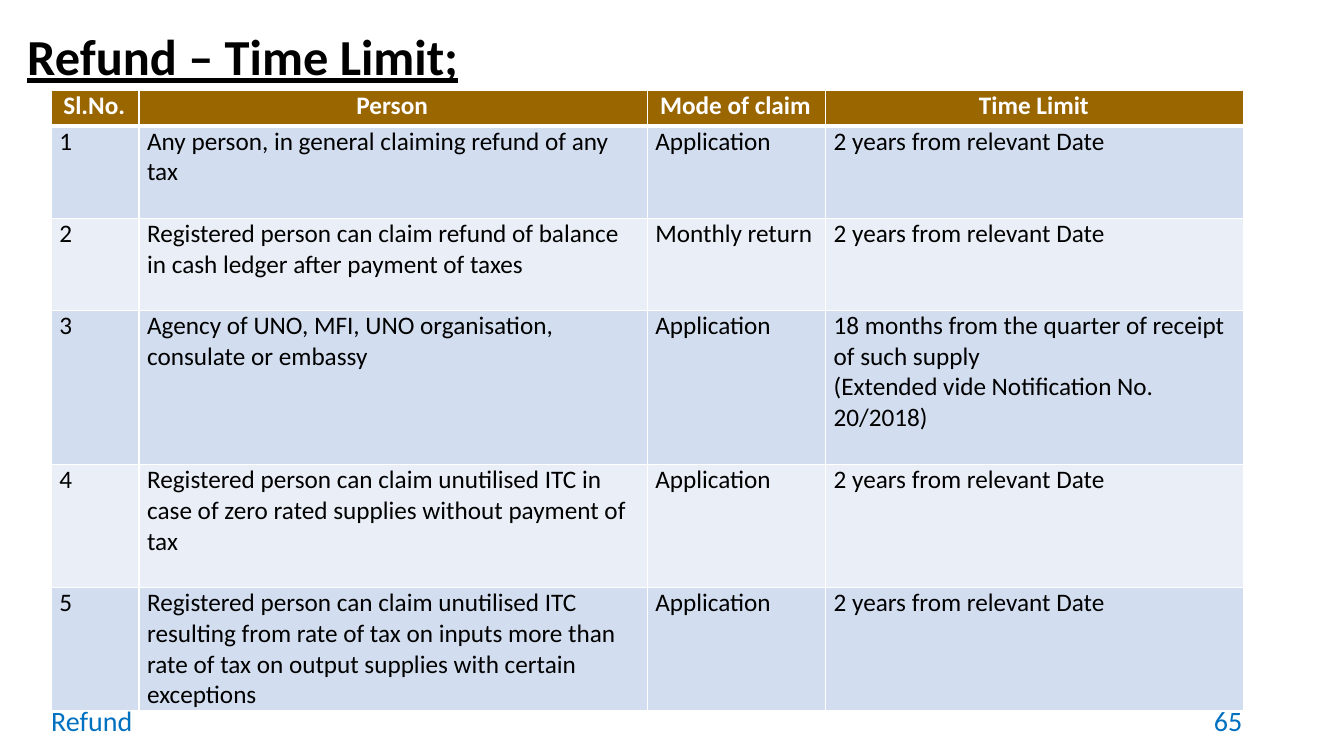
from lxml.etree import SubElement
from pptx import Presentation
from pptx.dml.color import RGBColor
from pptx.enum.text import MSO_ANCHOR, MSO_AUTO_SIZE, PP_ALIGN
from pptx.oxml.ns import qn
from pptx.util import Inches, Pt

FONT = "Calibri"
BLACK = RGBColor(0x00, 0x00, 0x00)
WHITE = RGBColor(0xFF, 0xFF, 0xFF)
BLUE = RGBColor(0x00, 0x70, 0xC0)
BROWN = RGBColor(0x99, 0x66, 0x00)
BANDS = (RGBColor(0xD2, 0xDE, 0xEF), RGBColor(0xEA, 0xEF, 0xF7))

TWO_YEARS = "2 years from relevant Date"
COL_WIDTHS = (0.87, 5.04, 1.77, 4.15)
ROW_HEIGHTS = (0.35, 0.92, 0.91, 1.53, 1.22, 1.22)
HEADER = ("Sl.No.", "Person", "Mode of claim", "Time Limit")
CLAIMS = (
    ("Any person, in general claiming refund of any tax", "Application", TWO_YEARS),
    ("Registered person can claim refund of balance in cash ledger after payment of taxes",
     "Monthly return", TWO_YEARS),
    ("Agency of UNO, MFI, UNO organisation, consulate or embassy", "Application",
     "18 months from the quarter of receipt of such supply\n"
     "(Extended vide Notification No. 20/2018)"),
    ("Registered person can claim unutilised ITC in case of zero rated supplies "
     "without payment of tax", "Application", TWO_YEARS),
    ("Registered person can claim unutilised ITC resulting from rate of tax on inputs "
     "more than rate of tax on output supplies with certain exceptions",
     "Application", TWO_YEARS),
)


def add_run(p, text, size, color, bold=False):
    r = p.add_run()
    r.text = text
    r.font.name = FONT
    r.font.size = Pt(size)
    r.font.color.rgb = color
    r.font.bold = bold
    return r


def set_title(s, text):
    title = s.shapes.title
    title.left, title.top = Inches(0.17), Inches(0.27)
    title.width, title.height = Inches(12.7), Inches(0.65)
    tf = title.text_frame
    tf.auto_size = MSO_AUTO_SIZE.NONE
    tf.vertical_anchor = MSO_ANCHOR.TOP
    p = tf.paragraphs[0]
    p.alignment = PP_ALIGN.JUSTIFY
    p.line_spacing = 0.9
    p.space_before = p.space_after = Pt(6)
    add_run(p, text, 36, BLACK, bold=True).font.underline = True


def add_footer(s, text, left, width, align):
    sp = s.shapes.add_textbox(Inches(left), Inches(6.95), Inches(width), Inches(0.4))
    tf = sp.text_frame
    tf.word_wrap = True
    tf.vertical_anchor = MSO_ANCHOR.MIDDLE
    p = tf.paragraphs[0]
    p.alignment = align
    add_run(p, text, 20, BLUE)


def set_borders(cell, bottom):
    """Draw white cell borders, 1 pt except for the bottom one."""
    tc_pr = cell._tc.get_or_add_tcPr()
    sides = (("a:lnL", 1), ("a:lnR", 1), ("a:lnT", 1), ("a:lnB", bottom))
    for i, (tag, width) in enumerate(sides):
        ln = SubElement(tc_pr, qn(tag), w=str(Pt(width)))
        fill = SubElement(ln, qn("a:solidFill"))
        SubElement(fill, qn("a:srgbClr"), val=str(WHITE))
        tc_pr.insert(i, ln)


def fill_cell(cell, text, fill, color, align, bold, bottom):
    cell.margin_left, cell.margin_right = Inches(0.08), Inches(0.1)
    cell.margin_top = cell.margin_bottom = 0
    cell.fill.solid()
    cell.fill.fore_color.rgb = fill
    set_borders(cell, bottom)
    tf = cell.text_frame
    for i, line in enumerate(text.split("\n")):
        p = tf.add_paragraph() if i else tf.paragraphs[0]
        p.alignment = align
        add_run(p, line, 18, color, bold)


def add_claims_table(s):
    frame = s.shapes.add_table(len(ROW_HEIGHTS), len(COL_WIDTHS), Inches(0.51), Inches(0.9),
                               Inches(sum(COL_WIDTHS)), Inches(sum(ROW_HEIGHTS)))
    table = frame.table
    for col, width in zip(table.columns, COL_WIDTHS):
        col.width = Inches(width)
    for row, height in zip(table.rows, ROW_HEIGHTS):
        row.height = Inches(height)
    for c, text in enumerate(HEADER):
        fill_cell(table.cell(0, c), text, BROWN, WHITE, PP_ALIGN.CENTER, True, 3)
    for n, claim in enumerate(CLAIMS, start=1):
        for c, text in enumerate((str(n), *claim)):
            fill_cell(table.cell(n, c), text, BANDS[(n - 1) % 2], BLACK,
                      PP_ALIGN.LEFT, False, 1)


def main():
    prs = Presentation()
    prs.slide_width, prs.slide_height = Inches(13.33), Inches(7.5)
    s = prs.slides.add_slide(prs.slide_layouts[5])
    set_title(s, "Refund – Time Limit;")
    add_footer(s, "65", 9.42, 3, PP_ALIGN.RIGHT)
    add_footer(s, "Refund", 0.41, 1.18, PP_ALIGN.LEFT)
    add_claims_table(s)
    prs.save("out.pptx")


if __name__ == "__main__":
    main()
